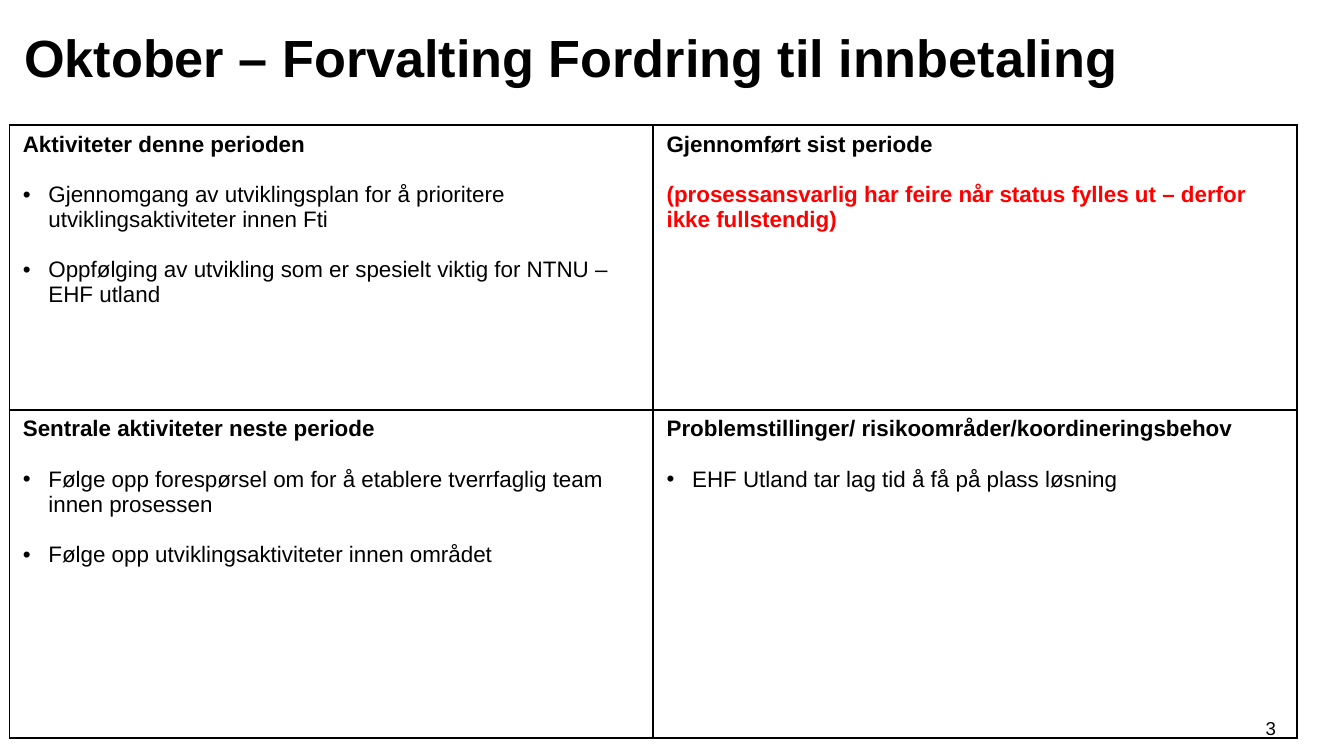
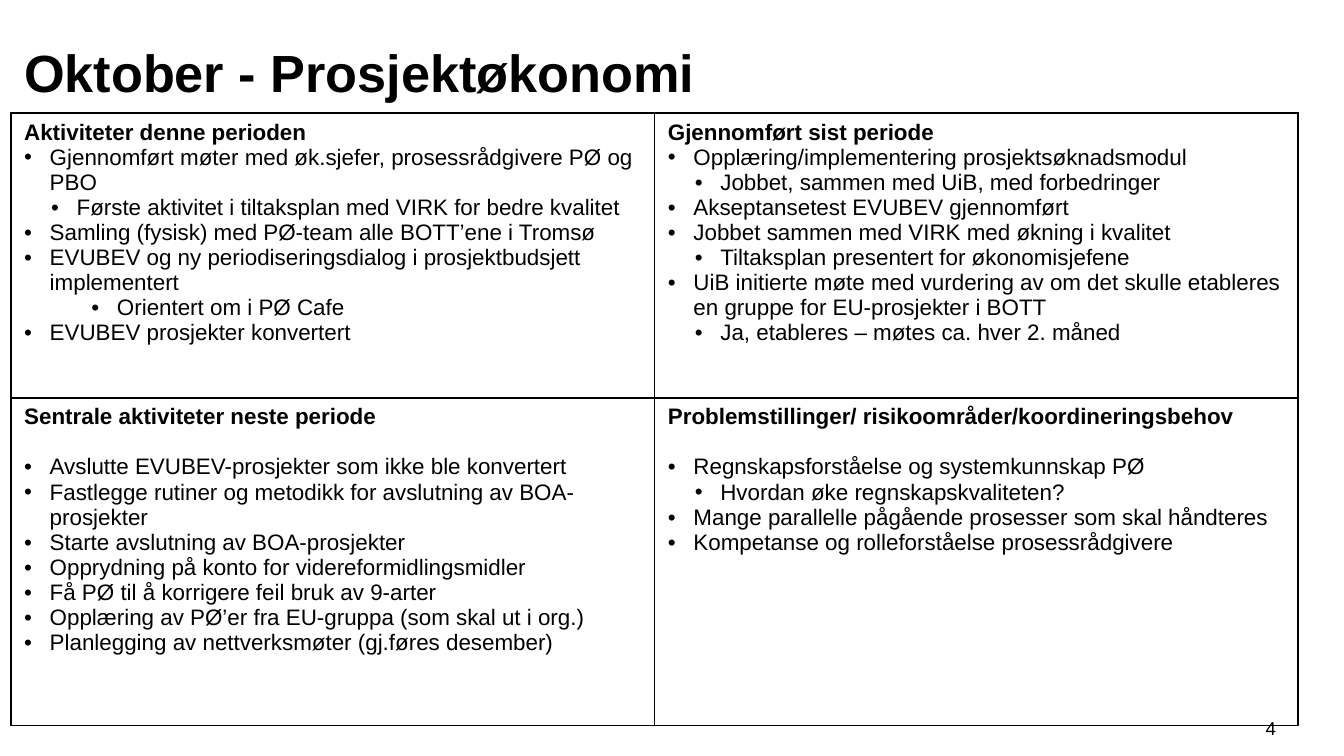
import pptx
import pptx.dml.color
import pptx.enum.text
import pptx.oxml.ns
import pptx.util
from dataclasses import dataclass
from lxml import etree
from pptx.util import Inches, Pt


@dataclass(frozen=True)
class Theme:
    font: str = "Arial"
    ink: str = "000000"
    alert: str = "FF0000"
    title_size: int = 28
    body_size: int = 12
    number_size: int = 10
    border: float = 1
    gap: float = 13.4  # one line of body text


THEME = Theme()
NOW = "Aktiviteter denne perioden"
DONE = "Gjennomført sist periode"
NEXT = "Sentrale aktiviteter neste periode"
RISKS = "Problemstillinger/ risikoområder/koordineringsbehov"

# Left edge of the text for each kind of line; "alert" has no bullet.
INDENTS = {"item": 0.19, "sub": 0.39, "deep": 0.69}
HANGING = 0.19

# Each cell: heading, which lines get a gap before them, lines.
REPORTS = [
    {
        "title": "Oktober – Forvalting Fordring til innbetaling",
        "title_height": 0.57, "title_inset": 0.05,
        "number": "3", "table_at": (0.07, 0.93),
        "cells": [
            [(NOW, "each", [
                ("item", "Gjennomgang av utviklingsplan for å prioritere utviklingsaktiviteter innen Fti"),
                ("item", "Oppfølging av utvikling som er spesielt viktig for NTNU – EHF utland")]),
             (DONE, "each", [
                ("alert", "(prosessansvarlig har feire når status fylles ut – derfor ikke fullstendig)")])],
            [(NEXT, "each", [
                ("item", "Følge opp forespørsel om for å etablere tverrfaglig team innen prosessen"),
                ("item", "Følge opp utviklingsaktiviteter innen området")]),
             (RISKS, "each", [
                ("item", "EHF Utland tar lag tid å få på plass løsning")])],
        ],
    },
    {
        "title": "Oktober - Prosjektøkonomi",
        "title_height": 0.71, "title_inset": 0.16,
        "number": "4", "table_at": (0.08, 0.84),
        "cells": [
            [(NOW, "none", [
                ("item", "Gjennomført møter med øk.sjefer, prosessrådgivere PØ og PBO"),
                ("sub", "Første aktivitet i tiltaksplan med VIRK for bedre kvalitet"),
                ("item", "Samling (fysisk) med PØ-team alle BOTT’ene i Tromsø"),
                ("item", "EVUBEV og ny periodiseringsdialog i prosjektbudsjett implementert"),
                ("deep", "Orientert om i PØ Cafe"),
                ("item", "EVUBEV prosjekter konvertert")]),
             (DONE, "none", [
                ("item", "Opplæring/implementering prosjektsøknadsmodul"),
                ("sub", "Jobbet, sammen med UiB, med forbedringer"),
                ("item", "Akseptansetest EVUBEV gjennomført"),
                ("item", "Jobbet sammen med VIRK med økning i kvalitet"),
                ("sub", "Tiltaksplan presentert for økonomisjefene"),
                ("item", "UiB initierte møte med vurdering av om det skulle etableres en gruppe for EU-prosjekter i BOTT"),
                ("sub", "Ja, etableres – møtes ca. hver 2. måned")])],
            [(NEXT, "first", [
                ("item", "Avslutte EVUBEV-prosjekter som ikke ble konvertert"),
                ("item", "Fastlegge rutiner og metodikk for avslutning av BOA-prosjekter"),
                ("item", "Starte avslutning av BOA-prosjekter"),
                ("item", "Opprydning på konto for videreformidlingsmidler"),
                ("item", "Få PØ til å korrigere feil bruk av 9-arter"),
                ("item", "Opplæring av PØ’er fra EU-gruppa (som skal ut i org.)"),
                ("item", "Planlegging av nettverksmøter (gj.føres desember)")]),
             (RISKS, "first", [
                ("item", "Regnskapsforståelse og systemkunnskap PØ"),
                ("sub", "Hvordan øke regnskapskvaliteten?"),
                ("item", "Mange parallelle pågående prosesser som skal håndteres"),
                ("item", "Kompetanse og rolleforståelse prosessrådgivere")])],
        ],
    },
]

COLUMN_WIDTH = 4.79
ROW_HEIGHTS = (2.12, 2.44)


def add_span(para, text, size, bold=False, color=THEME.ink):
    span = para.add_run()
    span.text = text
    span.font.name = THEME.font
    span.font.size = Pt(size)
    span.font.bold = bold
    span.font.color.rgb = pptx.dml.color.RGBColor.from_string(color)


def add_bullet(para, kind):
    properties = para._p.get_or_add_pPr()
    properties.set("marL", str(Inches(INDENTS[kind])))
    properties.set("indent", str(-Inches(HANGING)))
    etree.SubElement(properties, pptx.oxml.ns.qn("a:buFont"), typeface=THEME.font)
    etree.SubElement(properties, pptx.oxml.ns.qn("a:buChar"), char="•")
    if kind != "item":
        para.level = 1


def draw_borders(cell):
    properties = cell._tc.get_or_add_tcPr()
    for index, side in enumerate(("lnL", "lnR", "lnT", "lnB")):
        line = etree.Element(pptx.oxml.ns.qn(f"a:{side}"), w=str(Pt(THEME.border)))
        fill = etree.SubElement(line, pptx.oxml.ns.qn("a:solidFill"))
        etree.SubElement(fill, pptx.oxml.ns.qn("a:srgbClr"), val=THEME.ink)
        properties.insert(index, line)


def fill_cell(cell, heading, gaps, lines):
    cell.fill.background()
    draw_borders(cell)
    frame = cell.text_frame
    add_span(frame.paragraphs[0], heading, THEME.body_size, bold=True)
    for index, (kind, text) in enumerate(lines):
        para = frame.add_paragraph()
        if gaps == "each" or (gaps == "first" and index == 0):
            para.space_before = Pt(THEME.gap)
        if kind == "alert":
            add_span(para, text, THEME.body_size, bold=True, color=THEME.alert)
        else:
            add_bullet(para, kind)
            add_span(para, text, THEME.body_size)


def set_title(slide, report):
    title = slide.shapes.title
    title.left, title.top = Inches(0.08), Inches(0.14)
    title.width, title.height = Inches(9.17), Inches(report["title_height"])
    frame = title.text_frame
    frame.word_wrap = True
    frame.auto_size = pptx.enum.text.MSO_AUTO_SIZE.SHAPE_TO_FIT_TEXT
    frame.vertical_anchor = pptx.enum.text.MSO_ANCHOR.TOP
    frame.margin_top, frame.margin_bottom = Inches(report["title_inset"]), Inches(0.05)
    para = frame.paragraphs[0]
    para.alignment = pptx.enum.text.PP_ALIGN.LEFT
    add_span(para, report["title"], THEME.title_size, bold=True)


def add_page_number(slide, number):
    box = slide.shapes.add_textbox(Inches(9.27), Inches(5.27), Inches(0.37), Inches(0.3))
    frame = box.text_frame
    frame.word_wrap = True
    frame.vertical_anchor = pptx.enum.text.MSO_ANCHOR.MIDDLE
    para = frame.paragraphs[0]
    para.alignment = pptx.enum.text.PP_ALIGN.CENTER
    add_span(para, number, THEME.number_size)


def add_status_table(slide, report):
    left, top = report["table_at"]
    table = slide.shapes.add_table(
        2, 2, Inches(left), Inches(top),
        Inches(2 * COLUMN_WIDTH), Inches(sum(ROW_HEIGHTS))).table
    table.first_row = table.horz_banding = False
    for column in table.columns:
        column.width = Inches(COLUMN_WIDTH)
    for row, height, contents in zip(table.rows, ROW_HEIGHTS, report["cells"]):
        row.height = Inches(height)
        for cell, content in zip(row.cells, contents):
            fill_cell(cell, *content)


def main():
    deck = pptx.Presentation()
    deck.slide_width = Inches(10)
    deck.slide_height = deck.slide_width * 9 // 16
    for report in REPORTS:
        slide = deck.slides.add_slide(deck.slide_layouts[5])
        add_page_number(slide, report["number"])
        set_title(slide, report)
        add_status_table(slide, report)
    deck.save("out.pptx")


if __name__ == "__main__":
    main()
